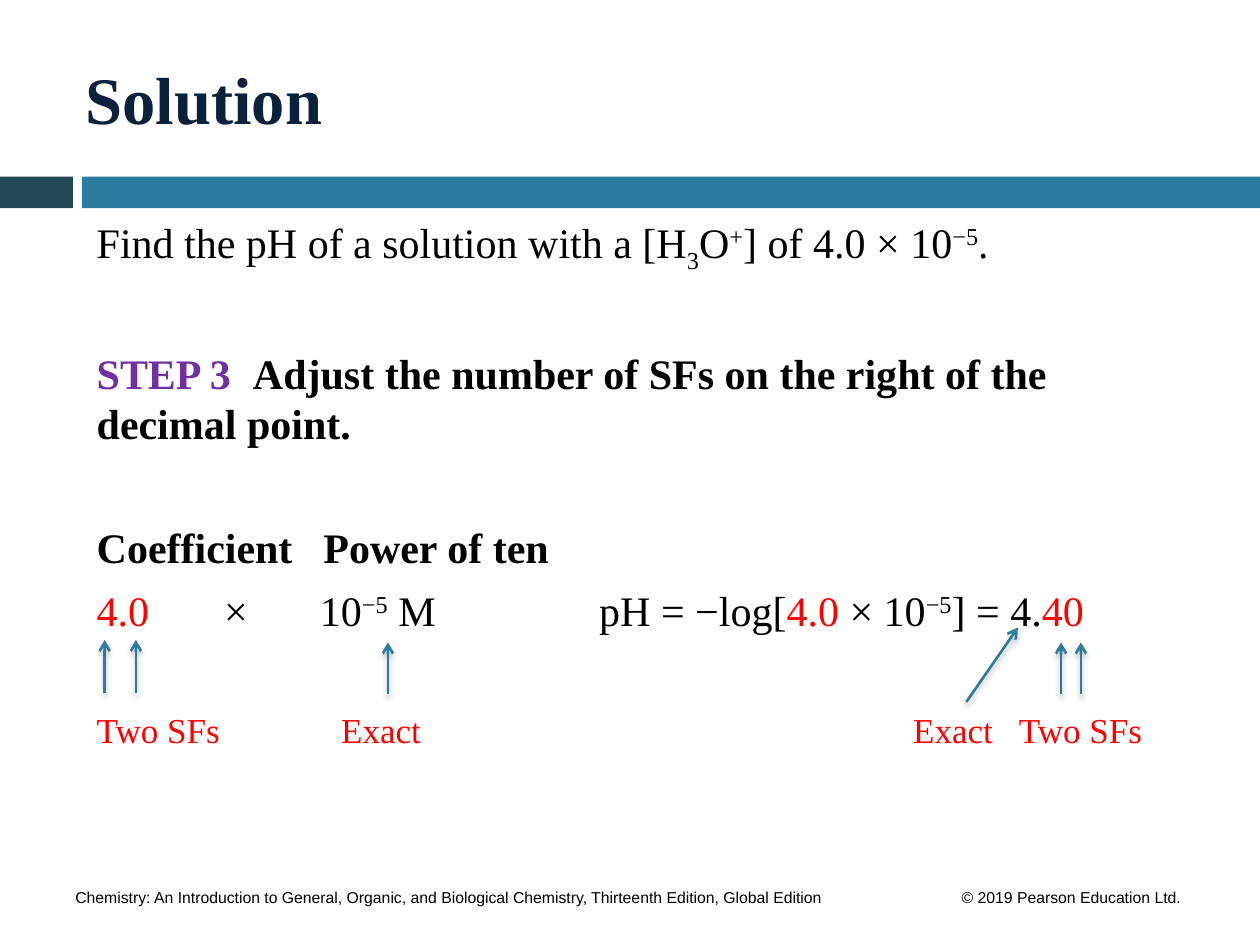
"""Build the chemistry slide on significant figures in a pH calculation."""
from dataclasses import dataclass

from lxml import etree
from pptx import Presentation
from pptx.dml.color import RGBColor
from pptx.enum import shapes, text
from pptx.oxml import ns, parse_xml
from pptx.util import Cm, Pt


@dataclass(frozen=True)
class Theme:
    """Colours, fonts and type sizes of the slide."""
    navy: str = "09213B"
    slate: str = "244A58"
    teal: str = "2C7C9F"
    black: str = "000000"
    red: str = "FF0000"
    purple: str = "7030A0"
    serif: str = "Times New Roman"
    sans: str = "Arial"
    title: int = 38
    body: int = 24
    label: int = 20
    footer: int = 9


THEME = Theme()
RED = {"color": THEME.red}
BOLD = {"bold": True}
SUB = {"baseline": -25000}
SUPER = {"baseline": 30000}
LABEL = {"color": THEME.red, "size": THEME.label}

SHADOW = (
    f'<a:effectLst {ns.nsdecls("a")}>'
    '<a:outerShdw blurRad="38100" dist="30480" dir="5400000" rotWithShape="0">'
    '<a:srgbClr val="808080"><a:alpha val="45000"/></a:srgbClr>'
    "</a:outerShdw></a:effectLst>"
)

SOLUTION_LINES = [
    (0, [], [("Find the pH of a solution with a [H", {}), ("3", SUB), ("O", {}),
             ("+", SUPER), ("] of 4.0 × 10", {}), ("−5", SUPER), (".", {})]),
    (42, [3.15], [("STEP 3\t", {"color": THEME.purple, **BOLD}),
                  ("Adjust the number of SFs on the right of the decimal point.", BOLD)]),
    (42, [4.57], [("Coefficient\tPower of ten", BOLD)]),
    (7, [2.57, 4.5, 10.13], [("4.0", RED), ("\t×\t10", {}), ("−5", SUPER),
                             (" M\tpH = −log[", {}), ("4.0 ", RED), ("× 10", {}),
                             ("−5", SUPER), ("] = 4.", {}), ("40", RED)]),
    (42, [4.93, 16.46, 18.59], [("Two SFs\tExact\tExact\tTwo SFs", LABEL)]),
]

ARROWS = [
    (2.11, 13.97, 2.11, 12.9),
    (2.74, 13.97, 2.74, 12.9),
    (7.82, 14, 7.82, 12.95),
    (19.48, 14.15, 20.52, 12.65),
    (21.39, 14, 21.39, 12.95),
    (21.79, 14, 21.79, 12.95),
]


def add_run(paragraph, words, size=THEME.body, color=THEME.black, font=THEME.serif,
            bold=False, baseline=0):
    """Append formatted words to a paragraph."""
    run = paragraph.add_run()
    run.text = words
    run.font.size = Pt(size)
    run.font.name = font
    run.font.bold = bold
    run.font.color.rgb = RGBColor.from_string(color)
    if baseline:
        run.font._element.set("baseline", str(baseline))


def set_tabs(paragraph, stops):
    """Give a paragraph left tab stops, in centimetres."""
    tabs = etree.SubElement(paragraph._p.get_or_add_pPr(), ns.qn("a:tabLst"))
    for stop in stops:
        etree.SubElement(tabs, ns.qn("a:tab"), pos=str(Cm(stop)), algn="l")


def add_box(slide, left, top, width, height):
    """Add a wrapping text box and return its text frame."""
    frame = slide.shapes.add_textbox(Cm(left), Cm(top), Cm(width), Cm(height)).text_frame
    frame.word_wrap = True
    return frame


def add_bar(slide, left, width, color):
    """Add one part of the band under the title."""
    bar = slide.shapes.add_shape(
        shapes.MSO_SHAPE.RECTANGLE, Cm(left), Cm(3.56), Cm(width), Cm(0.64))
    bar.shadow.inherit = False
    bar.fill.solid()
    bar.fill.fore_color.rgb = RGBColor.from_string(color)
    bar.line.fill.background()


def add_title(slide, words):
    """Place and format the title."""
    title = slide.shapes.title
    title.left, title.top, title.width, title.height = Cm(1.47), Cm(0.71), Cm(22.66), Cm(2.54)
    title.text_frame.vertical_anchor = text.MSO_ANCHOR.MIDDLE
    heading = title.text_frame.paragraphs[0]
    heading.alignment = text.PP_ALIGN.LEFT
    add_run(heading, words, size=THEME.title, color=THEME.navy, bold=True)


def add_solution(slide):
    """Write the question, the step and the worked values."""
    frame = add_box(slide, 1.7, 4.24, 22.43, 12.7)
    for index, (space, stops, runs) in enumerate(SOLUTION_LINES):
        line = frame.add_paragraph() if index else frame.paragraphs[0]
        line.space_before = Pt(space)
        if stops:
            set_tabs(line, stops)
        for words, style in runs:
            add_run(line, words, **style)


def add_arrow(slide, *ends):
    """Draw an arrow from a label up to its digit."""
    arrow = slide.shapes.add_connector(
        shapes.MSO_CONNECTOR.STRAIGHT, *(Cm(end) for end in ends))
    arrow.line.color.rgb = RGBColor.from_string(THEME.teal)
    arrow.line.width = Pt(1.5)
    etree.SubElement(arrow.line._get_or_add_ln(), ns.qn("a:tailEnd"), type="arrow")
    arrow._element.spPr.append(parse_xml(SHADOW))


def add_footer(slide, words, left, width, align):
    """Write one part of the footer."""
    line = add_box(slide, left, 17.78, width, 0.64).paragraphs[0]
    line.alignment = align
    add_run(line, words, size=THEME.footer, font=THEME.sans)


def main():
    """Build and save the slide."""
    deck = Presentation()
    deck.slide_width, deck.slide_height = Cm(25.4), Cm(19.05)
    slide = deck.slides.add_slide(deck.slide_layouts.get_by_name("Title Only"))
    add_bar(slide, 0, 1.47, THEME.slate)
    add_bar(slide, 1.65, 23.75, THEME.teal)
    add_footer(slide, "Chemistry: An Introduction to General, Organic, and Biological "
               "Chemistry, Thirteenth Edition, Global Edition", 1.27, 15.88, text.PP_ALIGN.LEFT)
    add_footer(slide, "© 2019 Pearson Education Ltd.", 18.42, 6.35, text.PP_ALIGN.CENTER)
    add_title(slide, "Solution")
    add_solution(slide)
    for ends in ARROWS:
        add_arrow(slide, *ends)
    deck.save("out.pptx")


if __name__ == "__main__":
    main()
